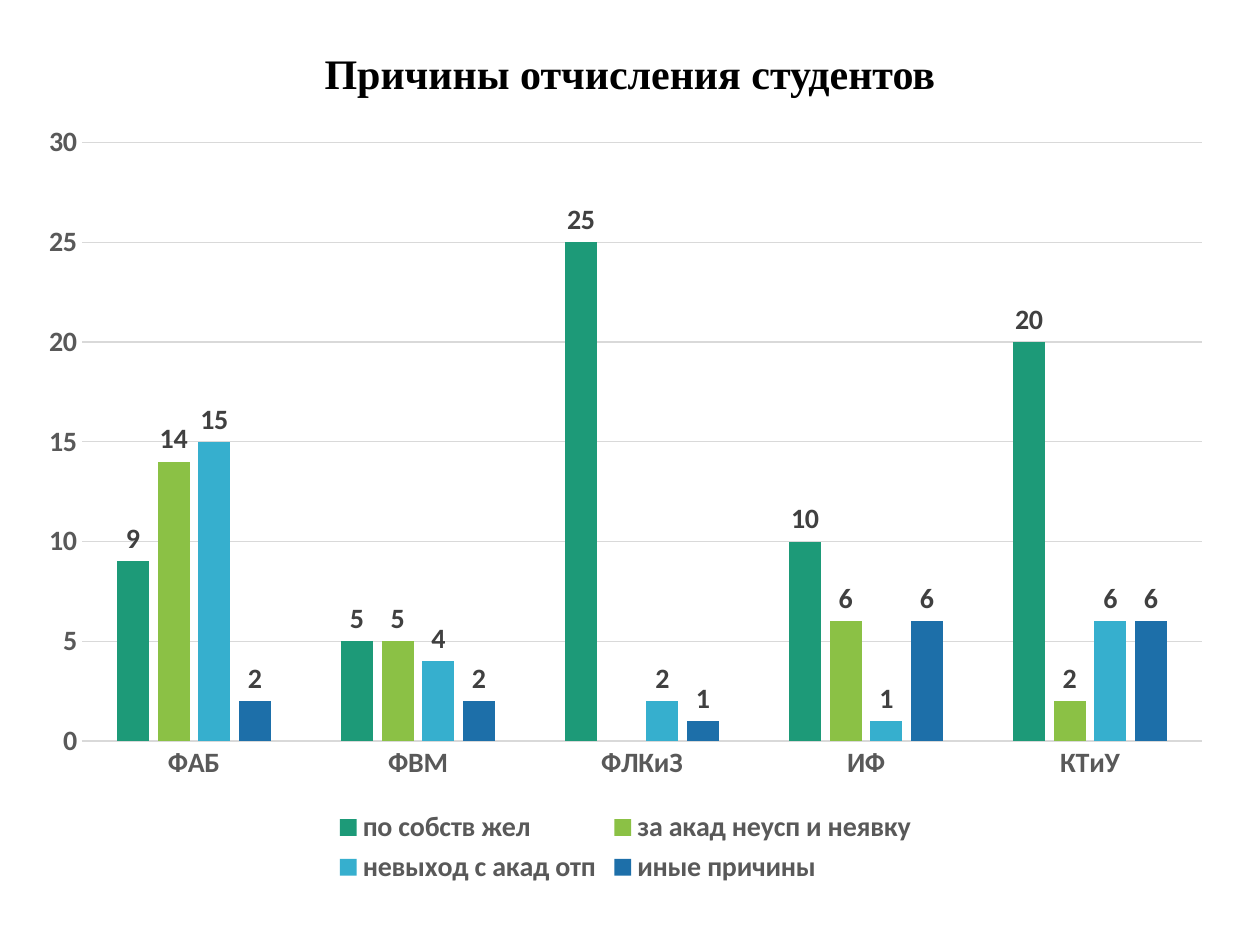
from pptx import Presentation
from pptx.chart.data import CategoryChartData
from pptx.dml.color import RGBColor
from pptx.enum.chart import XL_CHART_TYPE as Kind, XL_LABEL_POSITION as Spot
from pptx.enum.chart import XL_LEGEND_POSITION as Side, XL_TICK_MARK as Tick
from pptx.enum.text import MSO_ANCHOR as Anchor, PP_ALIGN as Align
from pptx.util import Pt

SCALE = 914400 / 126
HUES = {
    "ink": "000000", "axis": "595959", "label": "404040", "grid": "D9D9D9",
    "own": "1D9A78", "fail": "8BC145", "leave": "36AFCE", "other": "1D6FA9",
}
GROUPS = ["ФАБ", "ФВМ", "ФЛКиЗ", "ИФ", "КТиУ"]
CAUSES = [
    ("по собств жел", "own", [9, 5, 25, 10, 20]),
    ("за акад неусп и неявку", "fail", [14, 5, None, 6, 2]),
    ("невыход с акад отп", "leave", [15, 4, 2, 1, 6]),
    ("иные причины", "other", [2, 2, 1, 6, 6]),
]


def px(n):
    return round(n * SCALE)


def hue(key):
    return RGBColor.from_string(HUES[key])


def put(item, values):
    for key, value in values.items():
        setattr(item, key, value)


def style(font, key, size=16, name="Calibri"):
    put(font, {"size": Pt(size), "bold": True, "name": name})
    font.color.rgb = hue(key)


def rule(line):
    line.width = Pt(0.75)
    line.color.rgb = hue("grid")


def add_title(slide, box, text):
    title = slide.shapes.title
    put(title, dict(zip(("left", "top", "width", "height"), map(px, box))))
    frame = title.text_frame
    put(frame, {"text": text, "word_wrap": True, "vertical_anchor": Anchor.MIDDLE})
    par = frame.paragraphs[0]
    par.alignment = Align.CENTER
    style(par.runs[0].font, "ink", 24, "Times New Roman")


def add_bars(slide, box):
    data = CategoryChartData()
    data.categories = GROUPS
    for name, _, values in CAUSES:
        data.add_series(name, values)
    chart = slide.shapes.add_chart(Kind.COLUMN_CLUSTERED, *map(px, box), data).chart
    put(chart, {"has_title": False, "has_legend": True})
    style(chart.font, "ink")
    put(chart.legend, {"position": Side.BOTTOM, "include_in_layout": False})
    style(chart.legend.font, "axis")

    cat, val = chart.category_axis, chart.value_axis
    for axis in (cat, val):
        put(axis, {"major_tick_mark": Tick.NONE, "minor_tick_mark": Tick.NONE})
        style(axis.tick_labels.font, "axis")
    rule(cat.format.line)
    val.format.line.fill.background()
    put(val, {"minimum_scale": 0, "maximum_scale": 30, "major_unit": 5})
    rule(val.major_gridlines.format.line)

    plot = chart.plots[0]
    put(plot, {"gap_width": 219, "overlap": -27, "vary_by_categories": False})
    for bars, (_, key, _) in zip(plot.series, CAUSES):
        bars.invert_if_negative = False
        bars.format.fill.solid()
        bars.format.fill.fore_color.rgb = hue(key)
        put(bars.data_labels, {"show_value": True, "position": Spot.OUTSIDE_END})
        style(bars.data_labels.font, "label")


def main():
    deck = Presentation()
    put(deck, {"slide_width": px(1260), "slide_height": px(945)})
    slide = deck.slides.add_slide(deck.slide_layouts[5])
    add_title(slide, (84, 36, 1092, 73), "Причины отчисления студентов")
    add_bars(slide, (25, 110, 1201, 780))
    deck.save("out.pptx")


if __name__ == "__main__":
    main()
